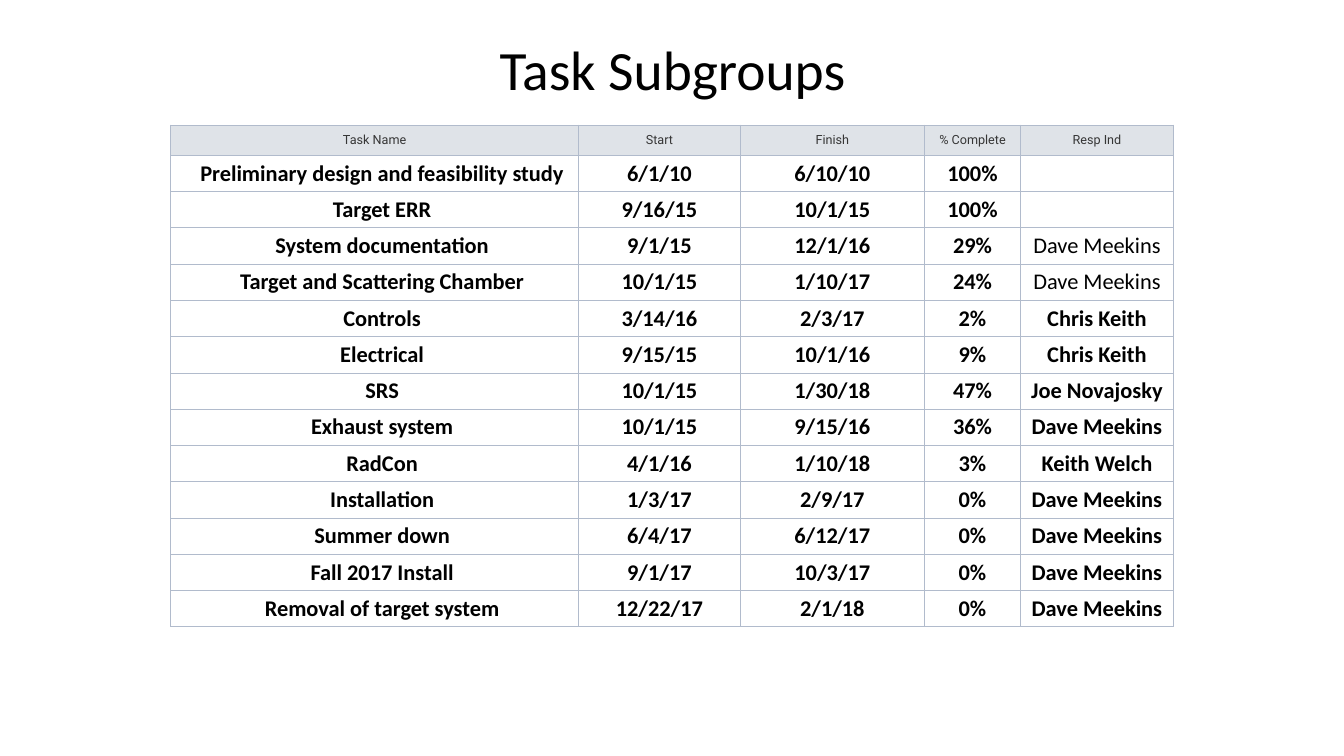
from dataclasses import dataclass

from lxml.etree import SubElement
from pptx import Presentation
from pptx.dml.color import RGBColor
from pptx.enum.text import MSO_ANCHOR as Anchor, MSO_AUTO_SIZE as AutoSize, PP_ALIGN as Align
from pptx.oxml.ns import qn
from pptx.util import Emu, Pt

PX = 9144  # 100 px to the inch
BLACK, GREY, WHITE = "000000", "363636", "FFFFFF"
HEADER_FILL, BORDER = "DFE3E8", "B1BBCC"
CELL_MARGIN, NAME_INDENT = 1, 16


@dataclass
class Style:
    font: str
    size: float
    color: str
    bold: bool = False


@dataclass
class Task:
    name: str
    start: str
    finish: str
    complete: str
    person: str = ""
    person_bold: bool = True


HEADER_STYLE = Style("Roboto", 9, GREY)
PLAIN_STYLE = Style("Calibri", 16, BLACK)
BOLD_STYLE = Style("Calibri", 16, BLACK, True)
TITLE_STYLE = Style("Calibri", 39.6, BLACK)

HEADERS = ["Task Name", "Start", "Finish", "% Complete", "Resp Ind"]
COL_WIDTHS = [405, 160, 183, 95, 152]
HEADER_HEIGHT, ROW_HEIGHT = 30, 36
TASKS = [
    Task("Preliminary design and feasibility study", "6/1/10", "6/10/10", "100%"),
    Task("Target ERR", "9/16/15", "10/1/15", "100%"),
    Task("System documentation", "9/1/15", "12/1/16", "29%", "Dave Meekins", False),
    Task("Target and Scattering Chamber", "10/1/15", "1/10/17", "24%", "Dave Meekins", False),
    Task("Controls", "3/14/16", "2/3/17", "2%", "Chris Keith"),
    Task("Electrical", "9/15/15", "10/1/16", "9%", "Chris Keith"),
    Task("SRS", "10/1/15", "1/30/18", "47%", "Joe Novajosky"),
    Task("Exhaust system", "10/1/15", "9/15/16", "36%", "Dave Meekins"),
    Task("RadCon", "4/1/16", "1/10/18", "3%", "Keith Welch"),
    Task("Installation", "1/3/17", "2/9/17", "0%", "Dave Meekins"),
    Task("Summer down", "6/4/17", "6/12/17", "0%", "Dave Meekins"),
    Task("Fall 2017 Install", "9/1/17", "10/3/17", "0%", "Dave Meekins"),
    Task("Removal of target system", "12/22/17", "2/1/18", "0%", "Dave Meekins"),
]


def px(n: int) -> Emu:
    return Emu(n * PX)


def rgb(value: str) -> RGBColor:
    return RGBColor.from_string(value)


def add_text(tf, text: str, style: Style) -> None:
    p = tf.paragraphs[0]
    p.alignment = Align.CENTER
    if not text:
        return
    r = p.add_run()
    r.text = text
    r.font.name, r.font.size, r.font.bold = style.font, Pt(style.size), style.bold
    r.font.color.rgb = rgb(style.color)


def add_borders(cell) -> None:
    tc_pr = cell._tc.get_or_add_tcPr()
    for side in ("lnL", "lnR", "lnT", "lnB"):
        ln = SubElement(tc_pr, qn(f"a:{side}"), w=str(Pt(0.5)))
        fill = SubElement(ln, qn("a:solidFill"))
        SubElement(fill, qn("a:srgbClr"), val=BORDER)


def fill_cell(cell, text: str, style: Style, fill: str, indent: int = CELL_MARGIN) -> None:
    add_borders(cell)
    cell.fill.solid()
    cell.fill.fore_color.rgb = rgb(fill)
    cell.vertical_anchor = Anchor.MIDDLE
    cell.margin_left = px(indent)
    cell.margin_right = cell.margin_top = cell.margin_bottom = px(CELL_MARGIN)
    add_text(cell.text_frame, text, style)


def add_title(s, text: str) -> None:
    title = s.shapes.title
    title.left, title.top, title.width, title.height = px(92), px(40), px(1150), px(63)
    tf = title.text_frame
    tf.auto_size = AutoSize.NONE
    tf.vertical_anchor = Anchor.MIDDLE
    add_text(tf, text, TITLE_STYLE)
    tf.paragraphs[0].line_spacing = 0.9


def add_task_table(s) -> None:
    height = HEADER_HEIGHT + ROW_HEIGHT * len(TASKS)
    table = s.shapes.add_table(len(TASKS) + 1, len(HEADERS), px(169), px(124),
                               px(sum(COL_WIDTHS)), px(height)).table
    table.first_row = table.horz_banding = False
    for col, width in zip(table.columns, COL_WIDTHS):
        col.width = px(width)
    for i, row in enumerate(table.rows):
        row.height = px(ROW_HEIGHT if i else HEADER_HEIGHT)

    # Header row
    for c, text in enumerate(HEADERS):
        fill_cell(table.cell(0, c), text, HEADER_STYLE, HEADER_FILL)

    # Task rows
    for i, task in enumerate(TASKS, 1):
        fill_cell(table.cell(i, 0), task.name, BOLD_STYLE, WHITE, NAME_INDENT)
        for c, text in enumerate((task.start, task.finish, task.complete), 1):
            fill_cell(table.cell(i, c), text, BOLD_STYLE, WHITE)
        person_style = BOLD_STYLE if task.person_bold else PLAIN_STYLE
        fill_cell(table.cell(i, 4), task.person, person_style, WHITE)


def main() -> None:
    prs = Presentation()
    prs.slide_width, prs.slide_height = px(1333), px(750)
    s = prs.slides.add_slide(prs.slide_layouts[5])
    add_title(s, "Task Subgroups")
    add_task_table(s)
    prs.save("out.pptx")


if __name__ == "__main__":
    main()
